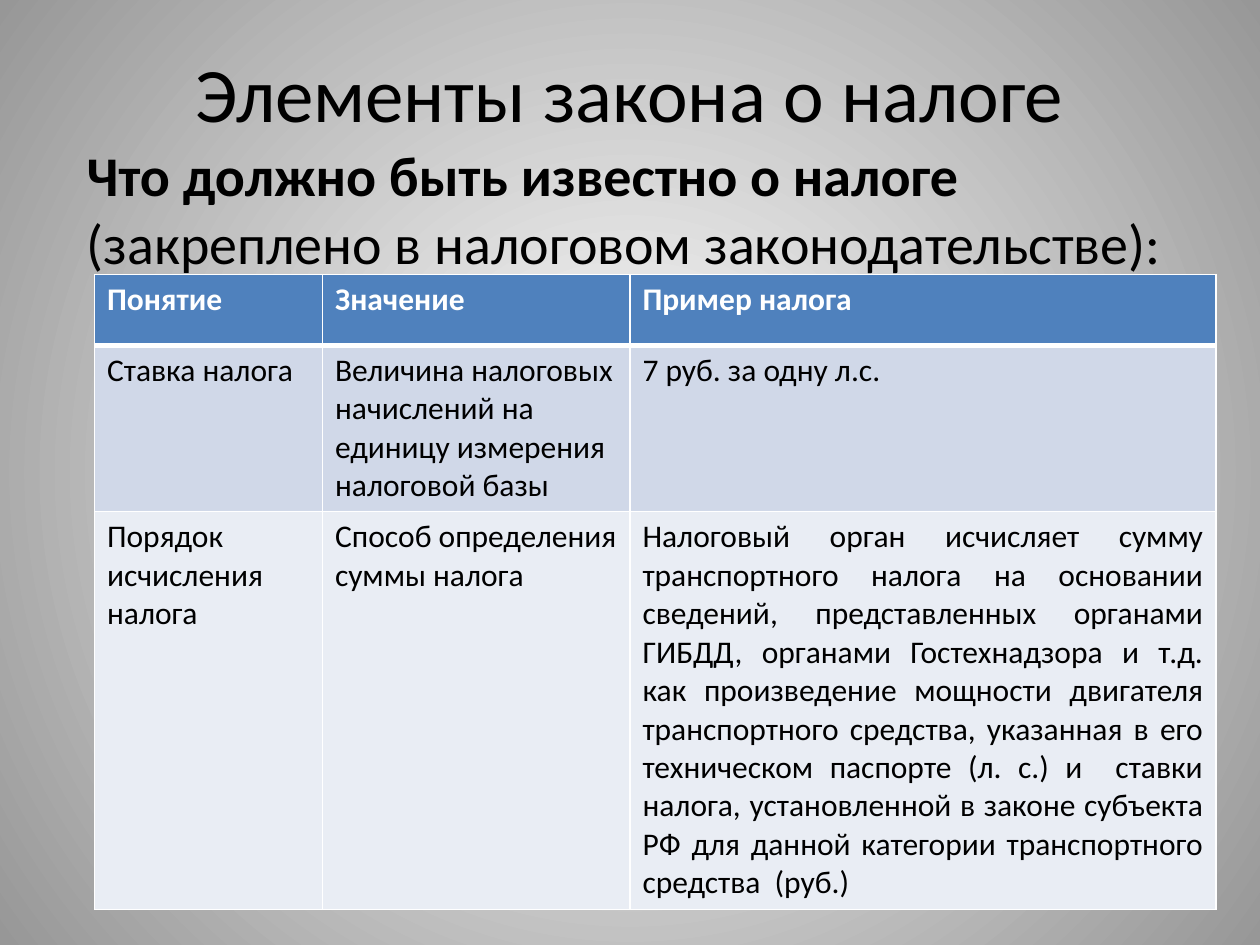
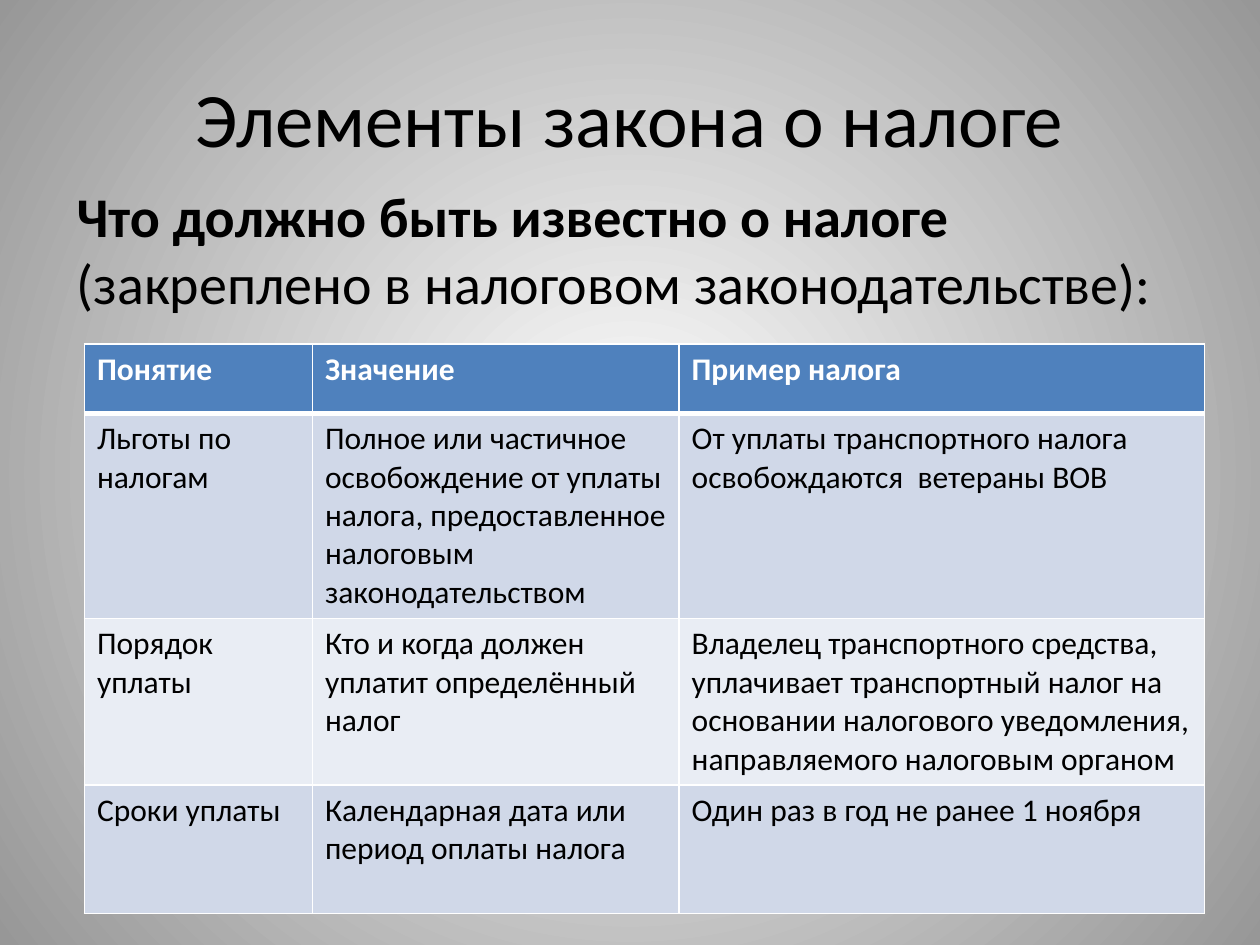
from lxml import etree
from pptx import Presentation
from pptx.dml.color import RGBColor
from pptx.enum.text import MSO_ANCHOR, PP_ALIGN
from pptx.oxml import parse_xml
from pptx.oxml.ns import nsdecls, qn
from pptx.util import Inches, Pt

FONT = "Calibri"
BLACK = RGBColor(0x00, 0x00, 0x00)
WHITE = RGBColor(0xFF, 0xFF, 0xFF)
EDGE_GREY = RGBColor(0x97, 0x97, 0x97)
HEADER_BLUE = RGBColor(0x4F, 0x81, 0xBD)
BAND_COLORS = (RGBColor(0xD0, 0xD8, 0xE8), RGBColor(0xE9, 0xED, 0xF4))

TITLE = "Элементы закона о налоге"
LEAD = (
    ("Что должно быть известно о налоге ", True),
    ("(закреплено в налоговом законодательстве):", False),
)
HEADER = ("Понятие", "Значение", "Пример налога")

# Positions are (left, top) in inches; "justified" holds (row, column) cells.
PAGES = (
    {
        "title_height": 0.85,
        "lead_at": (0.59, 1.07),
        "table_at": (0.75, 2.18),
        "columns": (1.81, 2.44, 4.65),
        "heights": (0.56, 1.32, 3.16),
        "justified": {(2, 2)},
        "rows": (
            ("Ставка налога",
             "Величина налоговых начислений на единицу измерения налоговой базы",
             "7 руб. за одну л.с."),
            ("Порядок исчисления налога",
             "Способ определения суммы налога",
             "Налоговый орган исчисляет сумму транспортного налога на основании "
             "сведений, представленных органами ГИБДД, органами Гостехнадзора "
             "и т.д. как произведение мощности двигателя транспортного средства, "
             "указанная в его техническом паспорте (л. с.) и  ставки налога, "
             "установленной в законе субъекта РФ для данной категории "
             "транспортного средства  (руб.)"),
        ),
    },
    {
        "title_height": 1.25,
        "lead_at": (0.51, 1.39),
        "table_at": (0.67, 2.73),
        "columns": (1.81, 2.91, 4.17),
        "heights": (0.55, 1.63, 1.32, 1.02),
        "justified": set(),
        "rows": (
            ("Льготы по налогам",
             "Полное или частичное освобождение от уплаты налога, "
             "предоставленное налоговым законодательством",
             "От уплаты транспортного налога освобождаются  ветераны ВОВ"),
            ("Порядок уплаты",
             "Кто и когда должен уплатит определённый налог",
             "Владелец транспортного средства, уплачивает транспортный налог "
             "на основании налогового уведомления, направляемого налоговым органом"),
            ("Сроки уплаты",
             "Календарная дата или период оплаты налога",
             "Один раз в год не ранее 1 ноября"),
        ),
    },
)


def set_background(master):
    """Give every slide a round gradient, white in the middle."""
    content = master.element.cSld
    old = content.find(qn("p:bg"))
    if old is not None:
        content.remove(old)
    content.insert(0, parse_xml(
        f'<p:bg {nsdecls("p", "a")}><p:bgPr><a:gradFill rotWithShape="1"><a:gsLst>'
        f'<a:gs pos="0"><a:srgbClr val="{WHITE}"/></a:gs>'
        f'<a:gs pos="100000"><a:srgbClr val="{EDGE_GREY}"/></a:gs></a:gsLst>'
        '<a:path path="circle">'
        '<a:fillToRect l="50000" t="50000" r="50000" b="50000"/></a:path>'
        '</a:gradFill><a:effectLst/></p:bgPr></p:bg>'))


def add_span(para, text, size, bold=False, color=BLACK):
    span = para.add_run()
    span.text = text
    span.font.name = FONT
    span.font.size = Pt(size)
    span.font.bold = bold
    span.font.color.rgb = color


def set_title(page, height):
    box = page.shapes.title
    box.left, box.top = Inches(0.5), Inches(0.3)
    box.width, box.height = Inches(9), Inches(height)
    box.text_frame.vertical_anchor = MSO_ANCHOR.MIDDLE
    para = box.text_frame.paragraphs[0]
    para.alignment = PP_ALIGN.CENTER
    add_span(para, TITLE, 44)


def add_lead(page, at):
    left, top = at
    box = page.shapes.add_textbox(Inches(left), Inches(top), Inches(9), Inches(1.2))
    box.text_frame.word_wrap = True
    para = box.text_frame.paragraphs[0]
    para.space_before = Pt(3)
    for text, bold in LEAD:
        add_span(para, text, 32, bold)


def add_borders(cell, row):
    """Draw thin white edges, with a thick one under the header row."""
    widths = {"L": 1, "R": 1, "T": 3 if row == 1 else 1, "B": 3 if row == 0 else 1}
    properties = cell._tc.get_or_add_tcPr()
    for side, points in widths.items():
        line = etree.SubElement(properties, qn(f"a:ln{side}"), w=str(Pt(points)))
        fill = etree.SubElement(line, qn("a:solidFill"))
        etree.SubElement(fill, qn("a:srgbClr"), val=str(WHITE))


def add_tax_table(page, content):
    left, top = content["table_at"]
    columns, heights = content["columns"], content["heights"]
    table = page.shapes.add_table(
        len(heights), len(columns), Inches(left), Inches(top),
        Inches(sum(columns)), Inches(sum(heights))).table
    for column, width in zip(table.columns, columns):
        column.width = Inches(width)
    for table_row, height in zip(table.rows, heights):
        table_row.height = Inches(height)

    for row, texts in enumerate((HEADER, *content["rows"])):
        is_header = row == 0
        for column, text in enumerate(texts):
            cell = table.cell(row, column)
            add_borders(cell, row)
            cell.fill.solid()
            cell.fill.fore_color.rgb = HEADER_BLUE if is_header else BAND_COLORS[(row - 1) % 2]
            para = cell.text_frame.paragraphs[0]
            if (row, column) in content["justified"]:
                para.alignment = PP_ALIGN.JUSTIFY
            add_span(para, text, 18, is_header, WHITE if is_header else BLACK)


def main():
    deck = Presentation()
    deck.slide_width, deck.slide_height = Inches(10), Inches(7.5)
    set_background(deck.slide_master)
    title_only = deck.slide_layouts.get_by_name("Title Only")
    for content in PAGES:
        page = deck.slides.add_slide(title_only)
        set_title(page, content["title_height"])
        add_lead(page, content["lead_at"])
        add_tax_table(page, content)
    deck.save("out.pptx")


if __name__ == "__main__":
    main()
